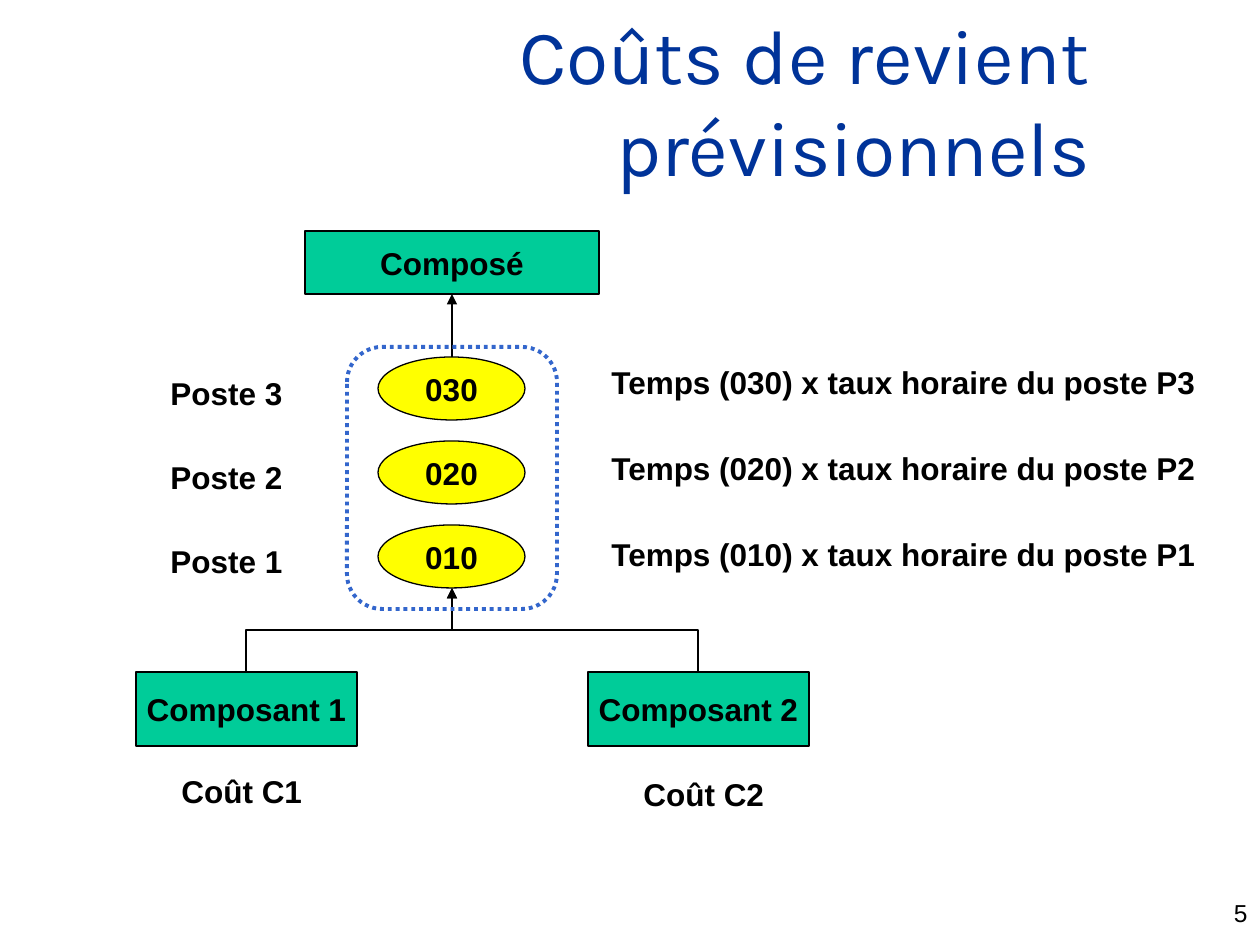
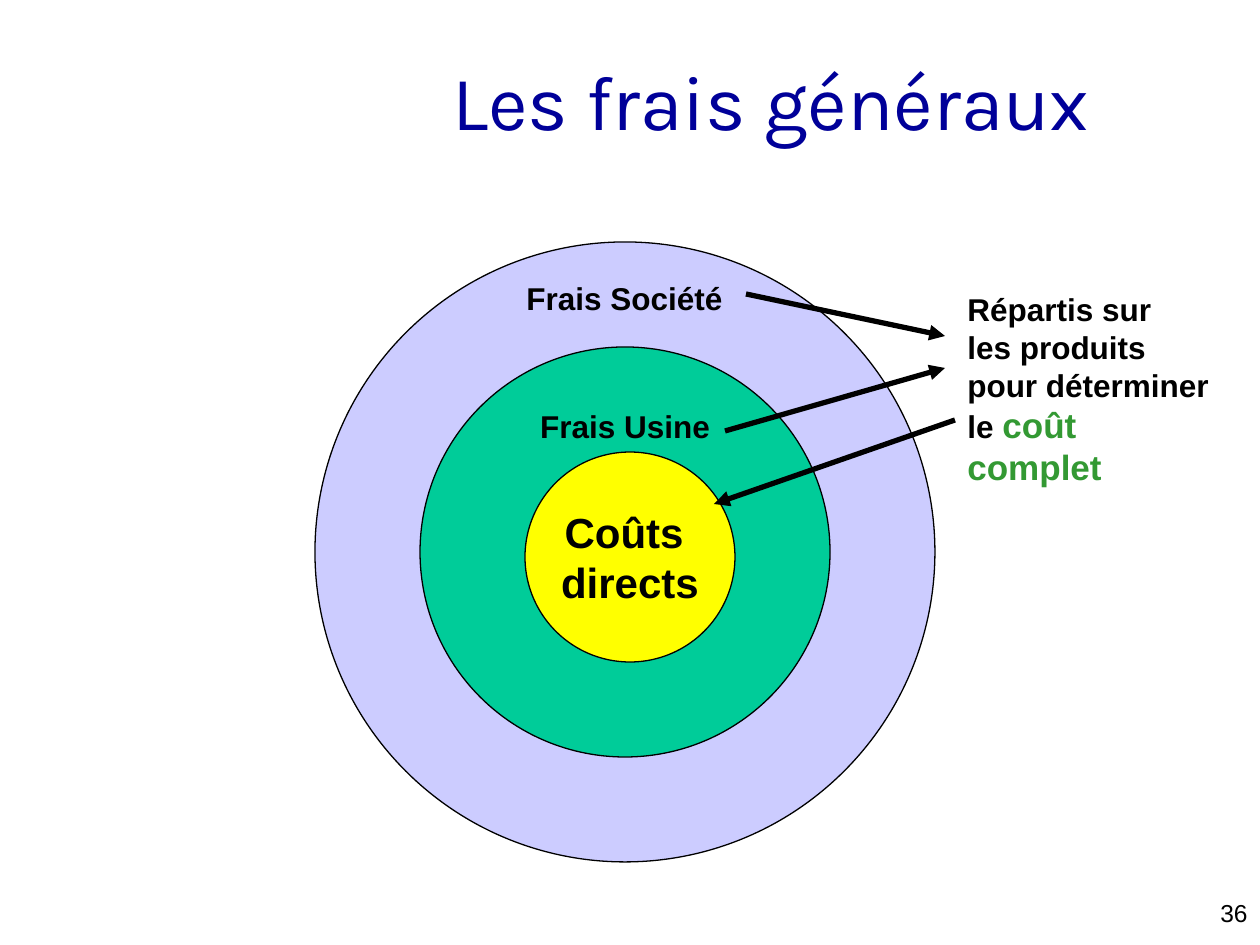
"""Builds two slides on product costs: planned cost flow and overhead rings."""
from lxml.etree import SubElement
from pptx import Presentation
from pptx.dml.color import RGBColor
from pptx.enum.dml import MSO_LINE
from pptx.enum.shapes import MSO_CONNECTOR as Link, MSO_SHAPE as Kind
from pptx.enum.text import MSO_ANCHOR as Anchor, PP_ALIGN as Align
from pptx.oxml.ns import qn
from pptx.util import Pt

HUES = {"ink": "000000", "blue": "003399", "navy": "000099", "green": "00CC99",
        "yellow": "FFFF00", "lilac": "CCCCFF", "dash": "3366CC", "leaf": "339933"}
PX = 914400 / 126

COST = {"title": "Coûts de revient prévisionnels", "hue": "blue", "page": "5"}
FEES = {"title": "Les frais généraux", "hue": "navy", "page": "36"}
TOP = ("Composé", 305, 231, 294, 63)
STEPS = [("030", "Poste 3", "Temps (030) x taux horaire du poste P3"),
         ("020", "Poste 2", "Temps (020) x taux horaire du poste P2"),
         ("010", "Poste 1", "Temps (010) x taux horaire du poste P1")]
PARTS = [("Composant 1", 136, "Coût C1", 169, 766),
         ("Composant 2", 588, "Coût C2", 631, 769)]
RINGS = [("", 315, 242, 620, "lilac", 18),
         ("Frais Usine", 420, 347, 410, "green", 18),
         ("Coûts \vdirects", 525, 452, 210, "yellow", 24)]
NOTE = "Répartis sur\nles produits\npour déterminer\nle "
GOAL = "coût complet"
ARROWS = [(746, 294, 945, 336), (725, 431, 945, 368), (955, 420, 714, 504)]


def emu(*vals):
    return [round(v * PX) for v in vals]


def rgb(hue):
    return RGBColor.from_string(HUES[hue])


def style(run, size, hue="ink", bold=True, face="Arial"):
    font = run.font
    font.name, font.size, font.bold = face, Pt(size), bold
    font.color.rgb = rgb(hue)


def write(frame, text, size, align, wrap=False, **look):
    frame.text = text
    frame.word_wrap = wrap
    for para in frame.paragraphs:
        para.alignment = align
        for run in para.runs:
            style(run, size, **look)


def label(slide, text, x, y, w, h=50, size=18, align=Align.LEFT, **look):
    box = slide.shapes.add_textbox(*emu(x, y, w, h))
    write(box.text_frame, text, size, align, **look)
    return box.text_frame


def shape(slide, kind, text, x, y, w, h, fill, size=18):
    item = slide.shapes.add_shape(kind, *emu(x, y, w, h))
    item.shadow.inherit = False
    if fill:
        item.fill.solid()
        item.fill.fore_color.rgb = rgb(fill)
    else:
        item.fill.background()
    item.line.color.rgb = rgb("ink")
    item.line.width = Pt(0.75)
    if text:
        write(item.text_frame, text, size, Align.CENTER)
        item.text_frame.vertical_anchor = Anchor.MIDDLE
    return item


def arrow(slide, x1, y1, x2, y2, width=0.75, kind=Link.STRAIGHT):
    line = slide.shapes.add_connector(kind, *emu(x1, y1, x2, y2))
    line.line.color.rgb = rgb("ink")
    line.line.width = Pt(width)
    SubElement(line.line._get_or_add_ln(), qn("a:tailEnd"), type="triangle")
    SubElement(line.element.spPr, qn("a:effectLst"))
    return line


def elbow(slide, x1, y1, x2, y2):
    """Draws a bent arrow that leaves upward, as a turned elbow connector."""
    mx, my = (x1 + x2) / 2, (y1 + y2) / 2
    side = 1 if x1 > x2 else -1
    dx, dy = side * (y1 - y2) / 2, abs(x1 - x2) / 2
    line = arrow(slide, mx + dx, my - dy, mx - dx, my + dy, kind=Link.ELBOW)
    turn = 90 if side > 0 else 270
    line.element.spPr.find(qn("a:xfrm")).set("rot", str(turn * 60000))


def start(deck, info):
    slide = deck.slides.add_slide(deck.slide_layouts[6])
    label(slide, info["page"], 998, 892, 262, 32, 14, Align.RIGHT,
          wrap=True, bold=False)
    head = label(slide, info["title"], 32, 21, 1071, 158, 44, Align.RIGHT,
                 wrap=True, hue=info["hue"], bold=False, face="Karla")
    head.vertical_anchor = Anchor.MIDDLE
    return slide


def draw_cost(deck):
    slide = start(deck, COST)
    shape(slide, Kind.RECTANGLE, *TOP, "green")
    mid = TOP[1] + TOP[3] / 2
    for i, (code, post, rate) in enumerate(STEPS):
        shape(slide, Kind.OVAL, code, 378, 357 + 84 * i, 147, 63, "yellow")
        label(slide, post, 158, 368 + 84 * i, 137)
        label(slide, rate, 599, 357 + 86 * i, 611)
    for name, x, cost, left, y in PARTS:
        shape(slide, Kind.RECTANGLE, name, x, 672, 221, 74, "green")
        elbow(slide, x + 110, 672, mid, 588)
        label(slide, cost, left, y, 146)
    arrow(slide, mid, 357, mid, 294)
    group = shape(slide, Kind.ROUNDED_RECTANGLE, "", 347, 347, 210, 262, None)
    group.line.color.rgb = rgb("dash")
    group.line.width = Pt(2.25)
    group.line.dash_style = MSO_LINE.ROUND_DOT


def draw_fees(deck):
    slide = start(deck, FEES)
    rings = [shape(slide, Kind.OVAL, text, x, y, d, d, fill, size)
             for text, x, y, d, fill, size in RINGS]
    plant = rings[1].text_frame
    plant.vertical_anchor = Anchor.TOP
    plant.margin_top = 0
    label(slide, "Frais Société", 514, 273, 222)
    note = label(slide, NOTE, 955, 284, 278, 169)
    goal = note.paragraphs[-1].add_run()
    goal.text = GOAL
    style(goal, 20, "leaf")
    for ends in ARROWS:
        arrow(slide, *ends, width=3)


def main():
    deck = Presentation()
    deck.slide_width, deck.slide_height = emu(1260, 945)
    draw_cost(deck)
    draw_fees(deck)
    deck.save("out.pptx")


if __name__ == "__main__":
    main()
